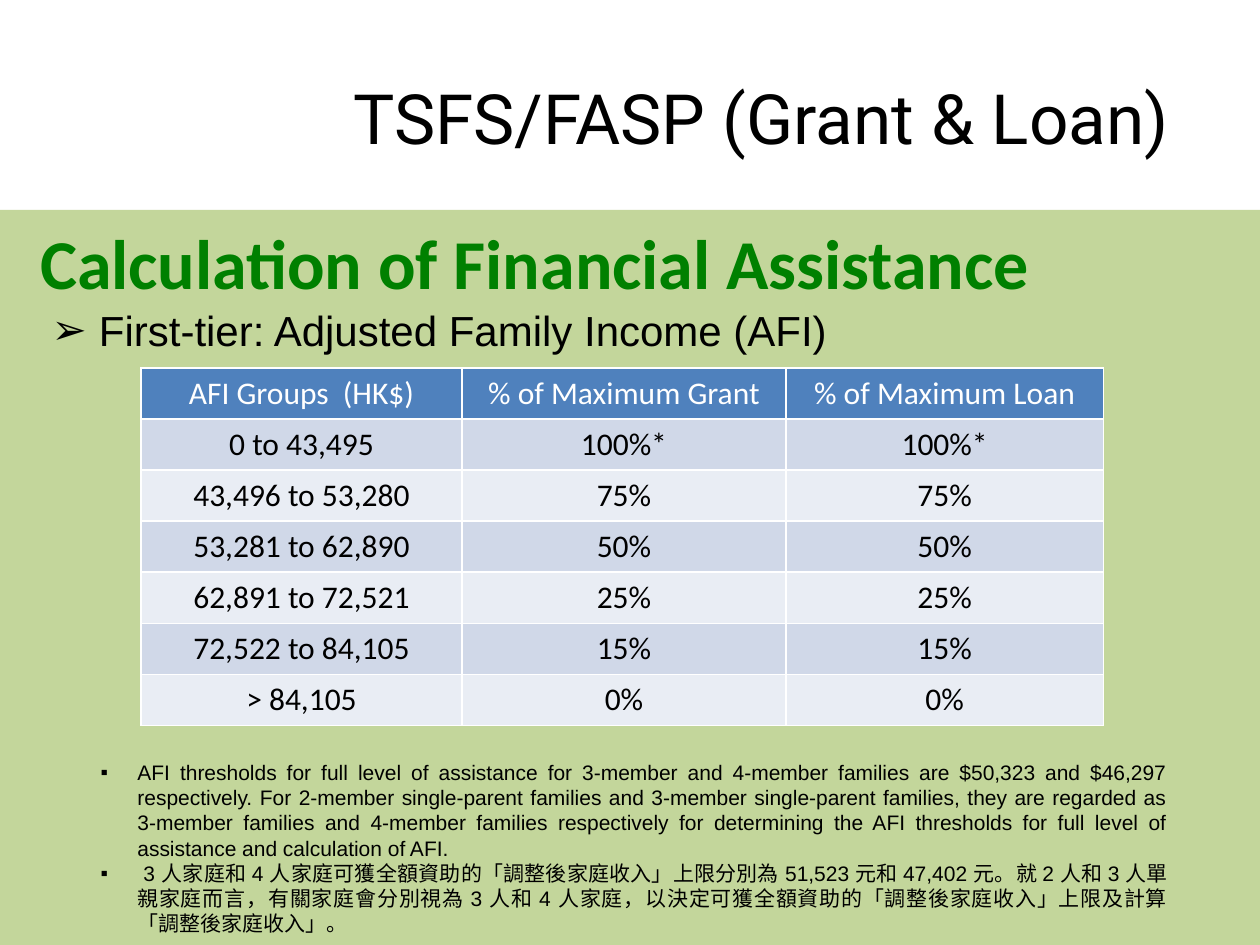
from lxml.etree import SubElement
from pptx import Presentation
from pptx.dml.color import RGBColor
from pptx.enum.shapes import MSO_SHAPE
from pptx.enum.text import MSO_ANCHOR, MSO_AUTO_SIZE, PP_ALIGN
from pptx.oxml.ns import qn
from pptx.util import Pt

AFI_ROWS = [
    ("AFI Groups  (HK$)", "% of Maximum Grant", "% of Maximum Loan"),
    ("0 to 43,495", "100%*", "100%*"),
    ("43,496 to 53,280", "75%", "75%"),
    ("53,281 to 62,890", "50%", "50%"),
    ("62,891 to 72,521", "25%", "25%"),
    ("72,522 to 84,105", "15%", "15%"),
    ("> 84,105", "0%", "0%"),
]
COLUMN_WIDTHS = (183.5, 185, 181.5)
ROW_HEIGHT = 29.2
NOTES = [
    "AFI thresholds for full level of assistance for 3-member and 4-member families are "
    "$50,323 and $46,297 respectively. For 2-member single-parent families and 3-member "
    "single-parent families, they are regarded as 3-member families and 4-member families "
    "respectively for determining the AFI thresholds for full level of assistance and "
    "calculation of AFI.",
    " 3 人家庭和 4 人家庭可獲全額資助的「調整後家庭收入」上限分別為 51,523 元和 47,402 元。"
    "就 2 人和 3 人單親家庭而言，有關家庭會分別視為 3 人和 4 人家庭，"
    "以決定可獲全額資助的「調整後家庭收入」上限及計算「調整後家庭收入」。",
]


def colour(value):
    return RGBColor.from_string(value)


def place(box, left, top, width, height):
    box.left, box.top, box.width, box.height = Pt(left), Pt(top), Pt(width), Pt(height)


def write(para, text, size, font, ink="000000", bold=False, align=PP_ALIGN.LEFT):
    para.alignment = align
    span = para.add_run()
    span.text = text
    span.font.size = Pt(size)
    span.font.name = font
    span.font.bold = bold
    span.font.color.rgb = colour(ink)


def set_bullet(para, character, margin, hanging):
    properties = para._p.get_or_add_pPr()
    properties.set("marL", str(Pt(margin)))
    properties.set("indent", str(-Pt(hanging)))
    SubElement(properties, qn("a:buFont"), typeface="Arial")
    SubElement(properties, qn("a:buChar"), char=character)


def set_borders(cell, ink, width):
    properties = cell._tc.get_or_add_tcPr()
    for side in ("a:lnL", "a:lnR", "a:lnT", "a:lnB"):
        line = SubElement(properties, qn(side), w=str(Pt(width)))
        fill = SubElement(line, qn("a:solidFill"))
        SubElement(fill, qn("a:srgbClr"), val=ink)


def add_band(page):
    band = page.shapes.add_shape(MSO_SHAPE.RECTANGLE, 0, Pt(120), Pt(720), Pt(420))
    band.shadow.inherit = False
    band.fill.solid()
    band.fill.fore_color.rgb = colour("C3D69B")
    band.line.fill.background()
    # The placeholders already exist, so the band goes behind them.
    page.shapes._spTree.insert(2, band._element)


def fill_title(title):
    place(title, 186, 21.6, 498, 90)
    frame = title.text_frame
    frame.auto_size = MSO_AUTO_SIZE.NONE
    frame.vertical_anchor = MSO_ANCHOR.MIDDLE
    write(frame.paragraphs[0], "TSFS/FASP (Grant & Loan)", 39.6, "Roboto",
          align=PP_ALIGN.CENTER)


def fill_body(body):
    """Write the tier line and, below the room for the table, the notes."""
    place(body, 22.3, 170.6, 652.3, 369.4)
    frame = body.text_frame
    frame.auto_size = MSO_AUTO_SIZE.NONE
    tier = frame.paragraphs[0]
    tier.space_before = Pt(0)
    set_bullet(tier, "➢", 27, 27)
    write(tier, "First-tier: Adjusted Family Income (AFI)", 24, "Arial")
    for gap, note in zip((231, 0), NOTES):
        para = frame.add_paragraph()
        para.space_before = Pt(gap)
        para.line_spacing = Pt(14.4)
        set_bullet(para, "▪", 49, 21)
        write(para, note, 12, "Arial", align=PP_ALIGN.JUSTIFY)


def add_afi_table(page):
    table = page.shapes.add_table(
        len(AFI_ROWS), len(COLUMN_WIDTHS), Pt(80.6), Pt(210.2),
        Pt(sum(COLUMN_WIDTHS)), Pt(ROW_HEIGHT * len(AFI_ROWS))).table
    table.horz_banding = False
    for column, width in zip(table.columns, COLUMN_WIDTHS):
        column.width = Pt(width)
    for index, texts in enumerate(AFI_ROWS):
        table.rows[index].height = Pt(ROW_HEIGHT)
        header = index == 0
        shade = "4F81BD" if header else ("E9EDF4", "D0D8E8")[index % 2]
        for cell, text in zip(table.rows[index].cells, texts):
            set_borders(cell, "FFFFFF", 1)
            cell.fill.solid()
            cell.fill.fore_color.rgb = colour(shade)
            write(cell.text_frame.paragraphs[0], text, 18, "Calibri",
                  "FFFFFF" if header else "000000", align=PP_ALIGN.CENTER)


def add_heading(page):
    box = page.shapes.add_textbox(Pt(15.8), Pt(121.7), Pt(635), Pt(55.4))
    box.text_frame.word_wrap = True
    write(box.text_frame.paragraphs[0], "Calculation of Financial Assistance",
          40, "Calibri", "008000", bold=True)


def main():
    deck = Presentation()
    deck.slide_width, deck.slide_height = Pt(720), Pt(540)
    page = deck.slides.add_slide(deck.slide_layouts[1])
    add_band(page)
    fill_title(page.shapes.title)
    fill_body(page.placeholders[1])
    add_afi_table(page)
    add_heading(page)
    deck.save("out.pptx")


if __name__ == "__main__":
    main()
